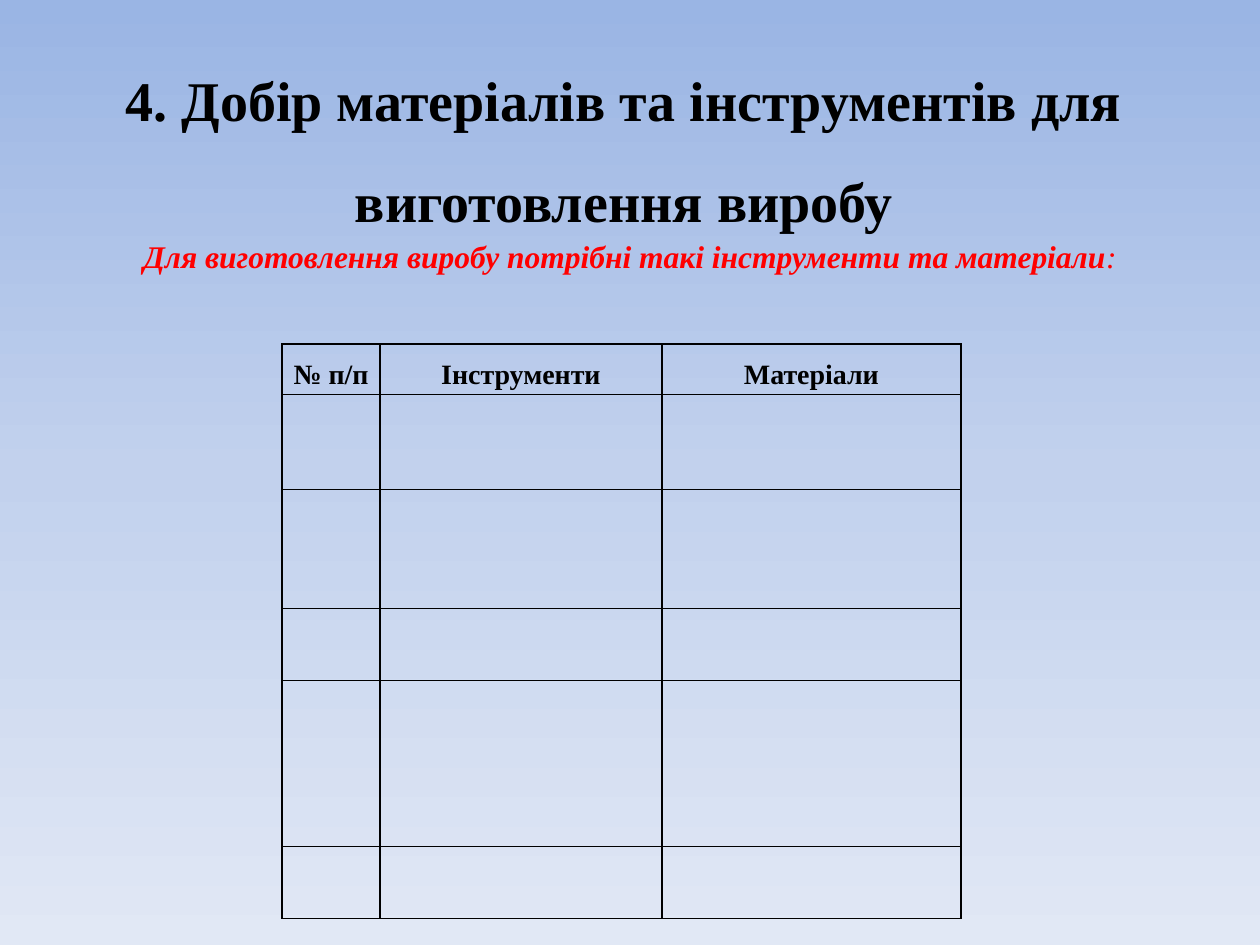
import copy

import pptx
import pptx.dml.color
import pptx.enum.text
import pptx.oxml
import pptx.oxml.ns
import pptx.util

PX = 914400 // 126
FONT = "Times New Roman"
BLACK = pptx.dml.color.RGBColor(0x00, 0x00, 0x00)
RED = pptx.dml.color.RGBColor(0xFF, 0x00, 0x00)
SKY_TOP = pptx.dml.color.RGBColor(0x9A, 0xB5, 0xE4)
SKY_MIDDLE = pptx.dml.color.RGBColor(0xC2, 0xD1, 0xED)
SKY_BOTTOM = pptx.dml.color.RGBColor(0xE1, 0xE8, 0xF5)
CENTER = pptx.enum.text.PP_ALIGN.CENTER
ANCHOR = pptx.enum.text.MSO_ANCHOR
GROW = pptx.enum.text.MSO_AUTO_SIZE.SHAPE_TO_FIT_TEXT


def add_text(para, text, size=18, color=BLACK, bold=True, italic=False, spacing=1.0):
    """Add a formatted span to a centred paragraph."""
    para.alignment = CENTER
    para.line_spacing = spacing
    span = para.add_run()
    span.text = text
    span.font.name = FONT
    span.font.size = pptx.util.Pt(size)
    span.font.color.rgb = color
    span.font.bold = bold
    span.font.italic = italic


def add_borders(cell, color=BLACK, width=1):
    """Draw a solid line on all four sides of a cell."""
    properties = cell._tc.get_or_add_tcPr()
    for index, side in enumerate(("lnL", "lnR", "lnT", "lnB")):
        line = pptx.oxml.parse_xml(
            f'<a:{side} {pptx.oxml.ns.nsdecls("a")} w="{pptx.util.Pt(width)}">'
            f'<a:solidFill><a:srgbClr val="{color}"/></a:solidFill></a:{side}>'
        )
        properties.insert(index, line)


class SlideBuilder:
    """Hold the current slide and add its elements in px."""

    def __init__(self, page):
        self.page = page

    def background(self, colors):
        """Fill the page with an even gradient from top to bottom."""
        fill = self.page.background.fill
        fill.gradient()
        fill.gradient_angle = 270
        stops = self.page.element.find(".//" + pptx.oxml.ns.qn("a:gsLst"))
        while len(stops) < len(colors):
            stops.append(copy.deepcopy(stops[0]))
        for index, (stop, color) in enumerate(zip(fill.gradient_stops, colors)):
            stop.position = index / (len(colors) - 1)
            stop.color.rgb = color

    def title(self, left, top, width, height, text):
        """Place and format the title placeholder."""
        box = self.page.shapes.title
        box.left, box.top = left * PX, top * PX
        box.width, box.height = width * PX, height * PX
        frame = box.text_frame
        frame.vertical_anchor = ANCHOR.TOP
        frame.word_wrap = True
        frame.auto_size = GROW
        add_text(frame.paragraphs[0], text, size=32, spacing=1.5)

    def subtitle(self, left, top, width, height, text, ending):
        """Add the red line with its lighter ending."""
        box = self.page.shapes.add_textbox(left * PX, top * PX, width * PX, height * PX)
        frame = box.text_frame
        frame.word_wrap = False
        frame.auto_size = GROW
        frame.vertical_anchor = ANCHOR.MIDDLE
        para = frame.paragraphs[0]
        add_text(para, text, color=RED, italic=True)
        add_text(para, ending, color=RED, bold=False, italic=True)

    def table(self, left, top, widths, heights, headings):
        """Add a ruled table with headings and empty rows."""
        table = self.page.shapes.add_table(
            len(heights), len(widths), left * PX, top * PX, sum(widths) * PX, sum(heights) * PX
        ).table
        table.first_row = False
        table.horz_banding = False
        for column, width in zip(table.columns, widths):
            column.width = width * PX
        for row, height in zip(table.rows, heights):
            row.height = height * PX
        for cell in table.iter_cells():
            cell.margin_left = cell.margin_right = 8 * PX
            cell.margin_top = cell.margin_bottom = 0
            cell.fill.background()
            add_borders(cell)
        for cell, heading in zip(table.rows[0].cells, headings):
            add_text(cell.text_frame.paragraphs[0], heading, size=16, spacing=1.5)


def main():
    """Build and save the deck."""
    deck = pptx.Presentation()
    deck.slide_width, deck.slide_height = 1260 * PX, 945 * PX
    builder = SlideBuilder(deck.slides.add_slide(deck.slide_layouts[5]))
    builder.background([SKY_TOP, SKY_MIDDLE, SKY_BOTTOM])
    builder.title(44, 26, 1160, 204, "4. Добір матеріалів та інструментів для виготовлення виробу")
    builder.table(
        282, 344, [98, 282, 299], [50, 95, 119, 72, 166, 72],
        ["№ п/п", "Інструменти", "Матеріали"],
    )
    builder.subtitle(
        126, 231, 1008, 50,
        "Для виготовлення виробу потрібні такі інструменти та матеріали", ":",
    )
    deck.save("out.pptx")


if __name__ == "__main__":
    main()
